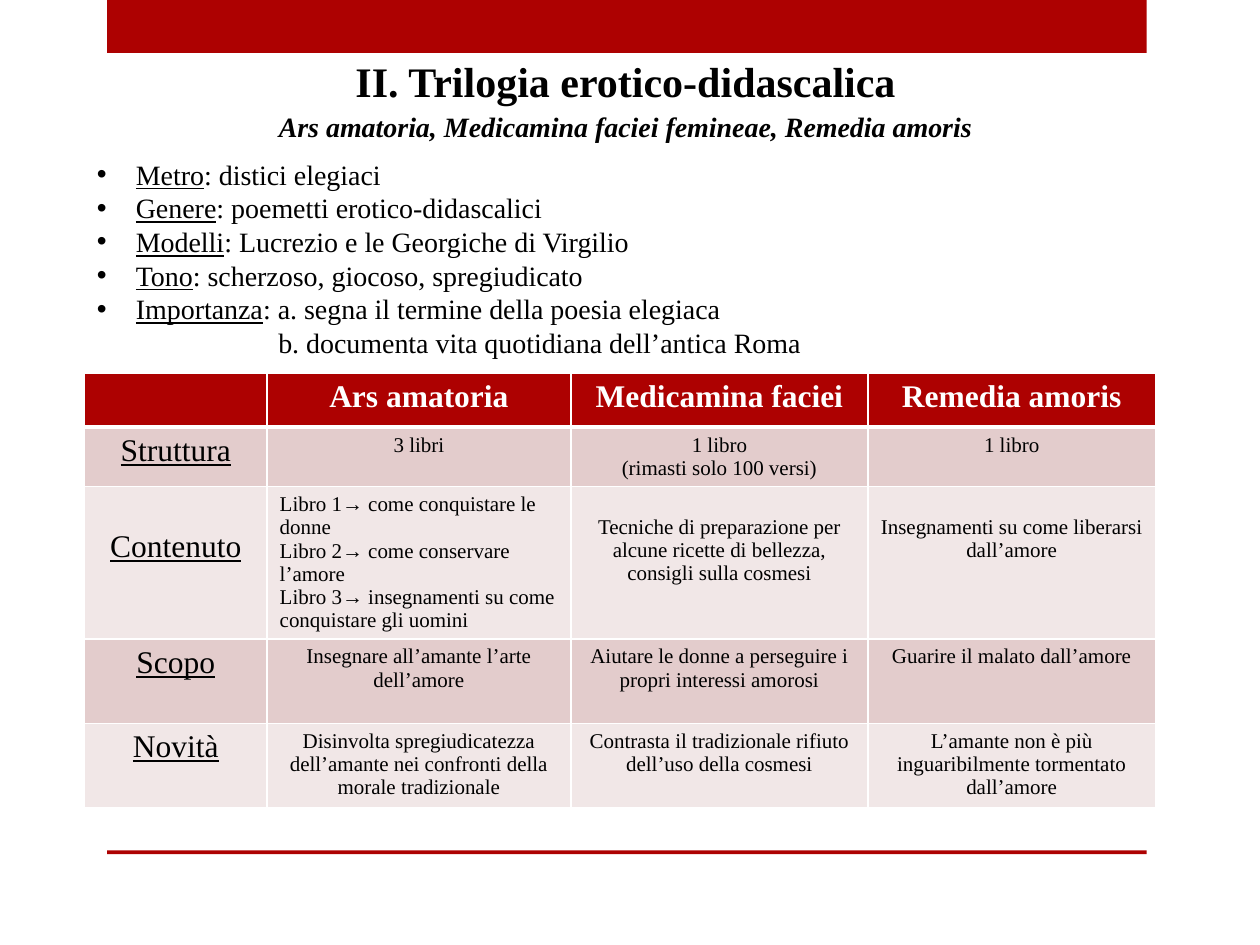
from dataclasses import dataclass

from lxml import etree
from pptx import Presentation
from pptx.dml.color import RGBColor
from pptx.enum.shapes import MSO_SHAPE
from pptx.enum.text import MSO_AUTO_SIZE, PP_ALIGN
from pptx.oxml.ns import qn
from pptx.util import Inches, Pt

RECTANGLE = MSO_SHAPE.RECTANGLE
GROW = MSO_AUTO_SIZE.SHAPE_TO_FIT_TEXT
CENTER, LEFT, JUSTIFY = PP_ALIGN.CENTER, PP_ALIGN.LEFT, PP_ALIGN.JUSTIFY


@dataclass(frozen=True)
class Theme:
    font: str = "Times New Roman"
    red: str = "AD0101"
    white: str = "FFFFFF"
    black: str = "000000"
    bands: tuple = ("E3CCCC", "F1E7E7")
    title: int = 24
    body: int = 16
    label: int = 18
    cell: int = 12


THEME = Theme()

TITLE = "II. Trilogia erotico-didascalica"
SUBTITLE = "Ars amatoria, Medicamina faciei femineae, Remedia amoris"
FACTS = [
    ("Metro", "distici elegiaci"),
    ("Genere", "poemetti erotico-didascalici"),
    ("Modelli", "Lucrezio e le Georgiche di Virgilio"),
    ("Tono", "scherzoso, giocoso, spregiudicato"),
    ("Importanza", "a. segna il termine della poesia elegiaca"),
]
SECOND_REASON = "b. documenta vita quotidiana dell’antica Roma"

WORKS = ["Ars amatoria", "Medicamina faciei", "Remedia amoris"]
ASPECTS = [
    ("Struttura", [["3 libri"], ["1 libro", "(rimasti solo 100 versi)"], ["1 libro"]]),
    ("Contenuto", [
        ["Libro 1→ come conquistare le donne",
         "Libro 2→ come conservare l’amore",
         "Libro 3→ insegnamenti su come conquistare gli uomini"],
        ["Tecniche di preparazione per alcune ricette di bellezza, consigli sulla cosmesi"],
        ["Insegnamenti su come liberarsi dall’amore"],
    ]),
    ("Scopo", [
        ["Insegnare all’amante l’arte dell’amore"],
        ["Aiutare le donne a perseguire i propri interessi amorosi"],
        ["Guarire il malato dall’amore"],
    ]),
    ("Novità", [
        ["Disinvolta spregiudicatezza dell’amante nei confronti della morale tradizionale"],
        ["Contrasta il tradizionale rifiuto dell’uso della cosmesi"],
        ["L’amante non è più inguaribilmente tormentato dall’amore"],
    ]),
]
COLUMN_WIDTHS = [1.45, 2.41, 2.36, 2.28]
ROW_HEIGHTS = [0.43, 0.45, 1.11, 0.67, 0.67]
TOP_MARGINS = {(2, 0): 0.34, (2, 2): 0.23, (2, 3): 0.23}
BARS = [(0, 0.42), (6.75, 0.03)]


def add_span(para, text, size=THEME.body, color=THEME.black, bold=False, italic=False, underline=False):
    span = para.add_run()
    span.text = text
    font = span.font
    font.name, font.size = THEME.font, Pt(size)
    font.color.rgb = RGBColor.from_string(color)
    font.bold, font.italic, font.underline = bold, italic, underline


def next_para(frame, align):
    first = frame.paragraphs[0]
    para = frame.add_paragraph() if first.runs else first
    para.alignment = align
    return para


def indent(para, left, hanging=0.0, bullet=None):
    properties = para._p.get_or_add_pPr()
    properties.set("marL", str(Inches(left)))
    properties.set("indent", str(Inches(-hanging)))
    if bullet:
        etree.SubElement(properties, qn("a:buFont"), typeface="Arial")
        etree.SubElement(properties, qn("a:buChar"), char=bullet)


def add_text_box(page, left, top, width, height):
    box = page.shapes.add_textbox(Inches(left), Inches(top), Inches(width), Inches(height))
    box.text_frame.word_wrap = True
    box.text_frame.auto_size = GROW
    return box.text_frame


def style_cell(cell, fill, bottom_width):
    properties = cell._tc.get_or_add_tcPr()
    for side in ("L", "R", "T", "B"):
        width = Pt(bottom_width if side == "B" else 1)
        line = etree.SubElement(properties, qn(f"a:ln{side}"), w=str(width))
        paint = etree.SubElement(line, qn("a:solidFill"))
        etree.SubElement(paint, qn("a:srgbClr"), val=THEME.white)
    cell.fill.solid()
    cell.fill.fore_color.rgb = RGBColor.from_string(fill)


def add_bars(page):
    for top, height in BARS:
        bar = page.shapes.add_shape(RECTANGLE, Inches(0.85), Inches(top), Inches(8.25), Inches(height))
        bar.shadow.inherit = False
        bar.fill.solid()
        bar.fill.fore_color.rgb = RGBColor.from_string(THEME.red)
        bar.line.fill.background()


def add_heading(page):
    frame = add_text_box(page, 0.83, 0.39, 8.27, 0.81)
    add_span(next_para(frame, CENTER), TITLE, size=THEME.title, bold=True)
    para = next_para(frame, CENTER)
    para.space_before = Pt(2)
    add_span(para, SUBTITLE, bold=True, italic=True)


def add_facts(page):
    frame = add_text_box(page, 0.67, 1.2, 8.15, 1.72)
    for name, detail in FACTS:
        para = next_para(frame, JUSTIFY)
        indent(para, 0.31, hanging=0.31, bullet="•")
        add_span(para, name, underline=True)
        add_span(para, f": {detail}")
    para = next_para(frame, JUSTIFY)
    indent(para, 1.44)
    add_span(para, SECOND_REASON)


def add_comparison(page):
    table = page.shapes.add_table(
        len(ROW_HEIGHTS), len(COLUMN_WIDTHS), Inches(0.67), Inches(2.96),
        Inches(sum(COLUMN_WIDTHS)), Inches(sum(ROW_HEIGHTS))).table
    for column, width in zip(table.columns, COLUMN_WIDTHS):
        column.width = Inches(width)
    for row, height in zip(table.rows, ROW_HEIGHTS):
        row.height = Inches(height)

    rows = [[[]] + [[work] for work in WORKS]]
    rows += [[[aspect]] + details for aspect, details in ASPECTS]
    for r, row in enumerate(rows):
        for c, lines in enumerate(row):
            cell = table.cell(r, c)
            if r == 0:
                look = dict(size=THEME.label, color=THEME.white, bold=True)
            elif c == 0:
                look = dict(size=THEME.label, underline=True)
            else:
                look = dict(size=THEME.cell)
            style_cell(cell, THEME.bands[(r - 1) % 2] if r else THEME.red, 1 if r else 3)
            cell.margin_top = Inches(TOP_MARGINS.get((r, c), 0.05))
            align = LEFT if len(lines) > 2 else CENTER
            for text in lines:
                add_span(next_para(cell.text_frame, align), text, **look)


def main():
    deck = Presentation()
    deck.slide_width, deck.slide_height = Inches(10), Inches(7.5)
    page = deck.slides.add_slide(deck.slide_layouts[6])
    add_bars(page)
    add_comparison(page)
    add_heading(page)
    add_facts(page)
    deck.save("out.pptx")


if __name__ == "__main__":
    main()
